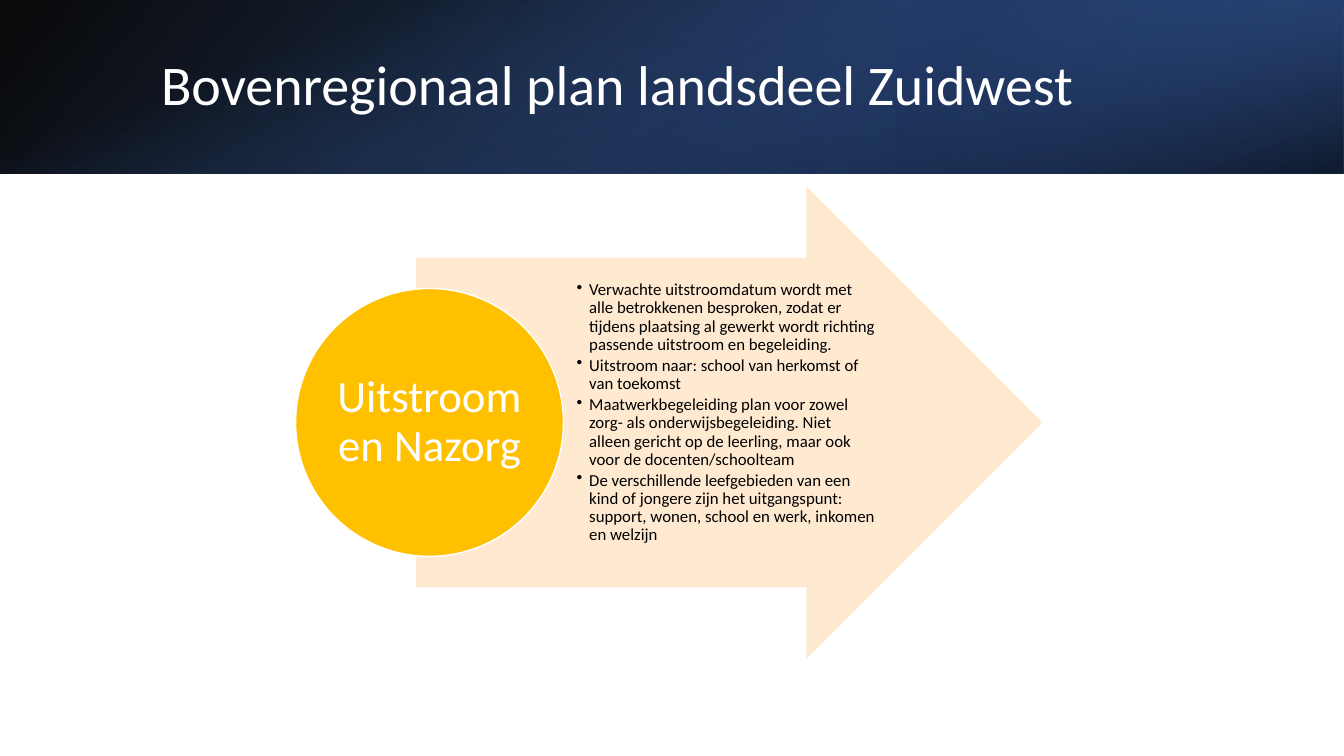
import pptx
import pptx.util
import pptx.dml.color
import pptx.enum.shapes
import pptx.enum.text
import pptx.oxml
import pptx.oxml.ns

Cm = pptx.util.Cm
Pt = pptx.util.Pt
KIND = pptx.enum.shapes.MSO_SHAPE
ALIGN = pptx.enum.text.PP_ALIGN
qn = pptx.oxml.ns.qn

WIDE, HIGH, BAND = 33.87, 19.05, 4.37
HUES = {
    "black": "000000",
    "white": "FFFFFF",
    "blue": "2F5597",
    "navy": "203864",
    "sky": "4472C4",
    "peach": "FFE8CC",
    "gold": "FFC000",
}
TITLE = "Bovenregionaal plan landsdeel Zuidwest"
PHASE = "Uitstroom en Nazorg"
POINTS = [
    "Verwachte uitstroomdatum wordt met alle betrokkenen besproken, zodat er "
    "tijdens plaatsing al gewerkt wordt richting passende uitstroom en begeleiding.",
    "Uitstroom naar: school van herkomst of van toekomst",
    "Maatwerkbegeleiding plan voor zowel zorg- als onderwijsbegeleiding. Niet "
    "alleen gericht op de leerling, maar ook voor de docenten/schoolteam",
    "De verschillende leefgebieden van een kind of jongere zijn het uitgangspunt: "
    "support, wonen, school en werk, inkomen en welzijn",
]


def rgb(hue):
    return pptx.dml.color.RGBColor.from_string(HUES[hue])


def fade(tag, share):
    node = pptx.oxml.parse_xml(
        f'<a:alpha {pptx.oxml.ns.nsdecls("a")} val="{share * 1000}"/>'
    )
    tag.append(node)


def add_form(slide, kind, box):
    form = slide.shapes.add_shape(kind, *map(Cm, box))
    form.shadow.inherit = False
    return form


def add_blend(slide, box, stops, angle, turn=0, flip=False):
    form = add_form(slide, KIND.RECTANGLE, box)
    form.line.fill.background()
    form.rotation = turn
    if flip:
        form._element.spPr.find(qn("a:xfrm")).set("flipH", "1")
    form.fill.gradient()
    form.fill.gradient_angle = 360 - angle
    for stop, (place, hue, share) in zip(form.fill.gradient_stops, stops):
        stop.position = place
        stop.color.rgb = rgb(hue)
    tags = form._element.spPr.iter(qn("a:srgbClr"))
    for tag, (place, hue, share) in zip(list(tags), stops):
        fade(tag, share)


def add_solid(slide, kind, box, hue, edge, share=100):
    form = add_form(slide, kind, box)
    form.fill.solid()
    form.fill.fore_color.rgb = rgb(hue)
    form.line.color.rgb = rgb(edge)
    form.line.width = Pt(1)
    if share < 100:
        for tag in list(form._element.spPr.iter(qn("a:srgbClr"))):
            fade(tag, share)
    return form


def add_text(slide, box, lines, size, hue, pads, align=ALIGN.LEFT, after=0, dots=False):
    frame = slide.shapes.add_textbox(*map(Cm, box)).text_frame
    sides = ("margin_left", "margin_top", "margin_right", "margin_bottom")
    looks = dict(zip(sides, map(Cm, pads)))
    looks.update(word_wrap=True, vertical_anchor=pptx.enum.text.MSO_ANCHOR.MIDDLE)
    for name, value in looks.items():
        setattr(frame, name, value)
    for row, line in enumerate(lines):
        para = frame.add_paragraph() if row else frame.paragraphs[0]
        form = {"alignment": align, "line_spacing": 0.9, "space_after": Pt(after)}
        for name, value in form.items():
            setattr(para, name, value)
        run = para.add_run()
        run.text = line
        for name, value in {"name": "Calibri", "size": Pt(size)}.items():
            setattr(run.font, name, value)
        run.font.color.rgb = rgb(hue)
        if dots:
            add_dot(para)


def add_dot(para):
    props = para._p.get_or_add_pPr()
    props.set("marL", str(Cm(0.32)))
    props.set("indent", str(Cm(-0.32)))
    props.append(pptx.oxml.parse_xml(
        f'<a:buChar {pptx.oxml.ns.nsdecls("a")} char="•"/>'
    ))


def add_band(slide):
    add_blend(slide, (0, 0, WIDE, BAND),
              [(0, "black", 96), (1, "blue", 100)], 140, flip=True)
    add_blend(slide, (WIDE * 2 / 3, 0, WIDE / 3, BAND),
              [(0.19, "navy", 68), (1, "sky", 79)], 320, 180, True)
    add_blend(slide, ((WIDE - BAND) / 2, (BAND - WIDE) / 2, BAND, WIDE),
              [(0.23, "sky", 0), (0.99, "black", 74)], 340, 90)
    add_text(slide, (3.81, 0.97, 27.89, 2.44), [TITLE], 40, "white",
             (0.25, 0.13, 0.25, 0.13))


def add_phase(slide):
    arrow = add_solid(slide, KIND.RIGHT_ARROW, (10.5, 4.74, 15.75, 11.82),
                      "peach", "peach", 90)
    arrow.adjustments[0] = 0.7
    arrow.adjustments[1] = 0.5
    add_text(slide, (14.45, 6.5, 7.67, 8.26), POINTS, 12, "black",
             (0.08, 0.03, 0.05, 0.48), after=2.2, dots=True)
    add_solid(slide, KIND.OVAL, (7.45, 7.27, 6.75, 6.75), "gold", "white")
    add_text(slide, (8.44, 8.26, 4.77, 4.77), [PHASE], 32, "white",
             (0.05,) * 4, ALIGN.CENTER)


def main():
    deck = pptx.Presentation()
    deck.slide_width, deck.slide_height = Cm(WIDE), Cm(HIGH)
    slide = deck.slides.add_slide(deck.slide_layouts[6])
    add_band(slide)
    add_phase(slide)
    deck.save("out.pptx")


if __name__ == "__main__":
    main()
